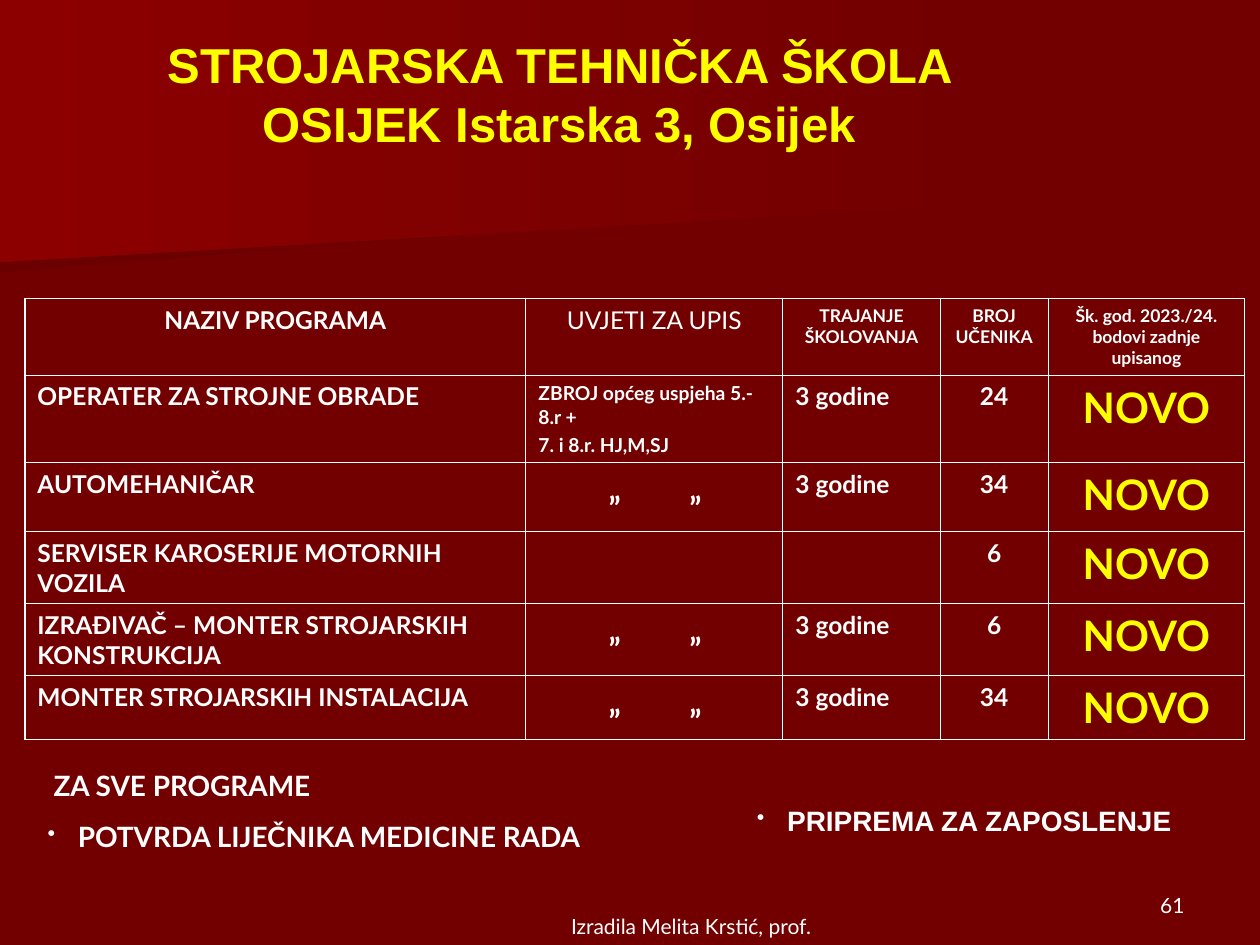
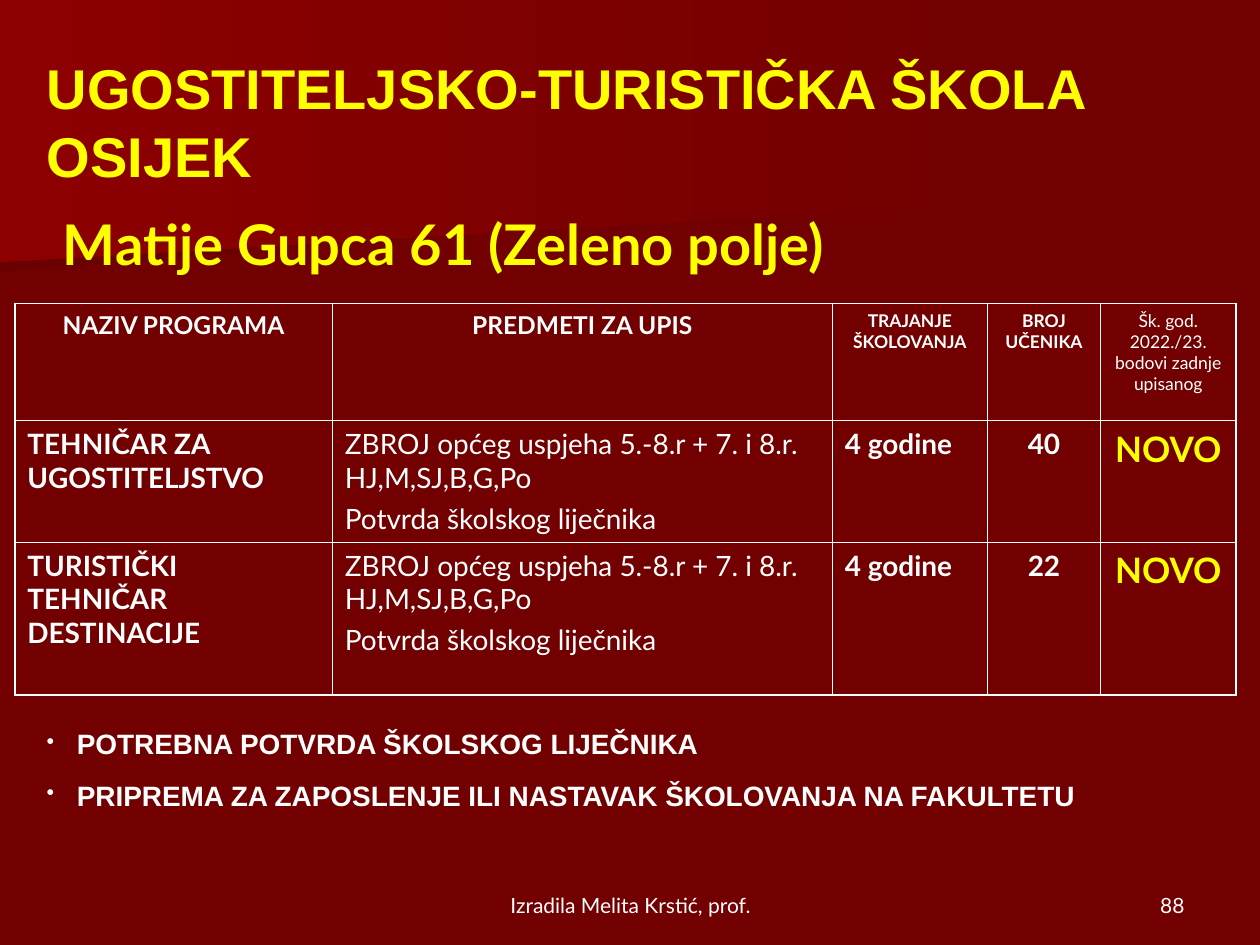
from dataclasses import dataclass
from typing import Optional, Sequence

from lxml import etree
from pptx import Presentation
from pptx import util as u
from pptx.dml.color import RGBColor
from pptx.enum import text as t
from pptx.oxml import ns


@dataclass(frozen=True)
class Theme:
    ground: str = "720000"
    glow: str = "8C0000"
    shade: str = "6B0000"
    white: str = "FFFFFF"
    yellow: str = "FFFF00"
    heading_font: str = "Arial"
    body_font: str = "Lato"
    title: int = 28
    big_title: int = 32
    note: int = 16
    footer: int = 12
    header: int = 14
    small_header: int = 10
    outer_line: float = 1.08
    inner_line: float = 0.45


THEME = Theme()
CENTER, RIGHT = t.PP_ALIGN.CENTER, t.PP_ALIGN.RIGHT
MIDDLE, BOTTOM, TOP = t.MSO_ANCHOR.MIDDLE, t.MSO_ANCHOR.BOTTOM, t.MSO_ANCHOR.TOP


@dataclass(frozen=True)
class Box:
    """Left, top, width and height in centimetres."""
    left: float
    top: float
    width: float
    height: float

    def lengths(self) -> list[u.Length]:
        return [u.Cm(v) for v in (self.left, self.top, self.width, self.height)]


@dataclass(frozen=True)
class Line:
    text: str
    size: float
    bold: bool = True
    color: str = THEME.white
    font: str = THEME.body_font
    align: Optional[t.PP_ALIGN] = None
    before: float = 0
    spacing: Optional[float] = None
    indent: float = 0
    bullet: bool = False
    tabs: tuple[float, ...] = ()


Cell = Sequence[Line]


@dataclass(frozen=True)
class Programmes:
    box: Box
    columns: tuple[float, ...]
    heights: tuple[float, ...]
    rows: Sequence[Sequence[Cell]]
    bottom_line: float


# Text
def write(frame, lines: Sequence[Line]) -> None:
    for i, line in enumerate(lines):
        paragraph = frame.paragraphs[0] if i == 0 else frame.add_paragraph()
        paragraph.text = line.text
        paragraph.alignment = line.align
        if line.spacing:
            paragraph.line_spacing = line.spacing
        if i and line.before:
            paragraph.space_before = u.Pt(line.before)
        props = paragraph._p.get_or_add_pPr()
        if line.indent:
            props.set("marL", str(u.Cm(line.indent)))
            props.set("indent", str(-u.Cm(line.indent) if line.bullet else 0))
        if line.bullet:
            color = etree.SubElement(props, ns.qn("a:buClr"))
            etree.SubElement(color, ns.qn("a:srgbClr"), val=line.color)
            etree.SubElement(props, ns.qn("a:buSzPct"), val="80000")
            etree.SubElement(props, ns.qn("a:buChar"), char="•")
        if line.tabs:
            stops = etree.SubElement(props, ns.qn("a:tabLst"))
            for stop in line.tabs:
                etree.SubElement(stops, ns.qn("a:tab"), pos=str(u.Cm(stop)), algn="l")
        font = paragraph.font
        font.name, font.size, font.bold = line.font, u.Pt(line.size), line.bold
        font.color.rgb = RGBColor.from_string(line.color)


def add_text(slide, box: Box, lines: Sequence[Line], anchor: t.MSO_ANCHOR = TOP) -> None:
    frame = slide.shapes.add_textbox(*box.lengths()).text_frame
    frame.word_wrap = True
    frame.vertical_anchor = anchor
    write(frame, lines)


def title(text: str, size: int, **options) -> Line:
    return Line(text, size, color=THEME.yellow, **{"font": THEME.heading_font, **options})


def bullet(text: str, font: str = THEME.heading_font) -> Line:
    return Line(text, THEME.note, font=font, before=10, indent=0.61, bullet=True)


# Background bands
def add_band(slide, points: Sequence[tuple[float, float]], left_color: str) -> None:
    corners = [(u.Cm(x), u.Cm(y)) for x, y in points]
    builder = slide.shapes.build_freeform(*corners[0])
    builder.add_line_segments(corners[1:], close=True)
    band = builder.convert_to_shape()
    band.shadow.inherit = False
    band.line.fill.background()
    band.fill.gradient()
    band.fill.gradient_angle = 180
    for stop, color, position in zip(band.fill.gradient_stops, (THEME.ground, left_color), (0, 1)):
        stop.color.rgb = RGBColor.from_string(color)
        stop.position = position


def add_base(deck, number: str, footer: Box):
    slide = deck.slides.add_slide(deck.slide_layouts[6])
    ground = slide.background.fill
    ground.solid()
    ground.fore_color.rgb = RGBColor.from_string(THEME.ground)
    add_band(slide, [(19.76, 3.89), (0, 5.49), (0, 2.57), (19.79, 2.57)], THEME.shade)
    add_band(slide, [(20.09, 4.11), (0, 5.28), (0, 0), (20.12, 0)], THEME.glow)
    add_text(slide, Box(18.21, 17.35, 5.92, 1.27),
             [Line(number, THEME.footer, bold=False, align=RIGHT)], BOTTOM)
    add_text(slide, footer,
             [Line("Izradila Melita Krstić, prof.", THEME.footer, bold=False, align=CENTER)], BOTTOM)
    return slide


# Programme table
def cell(*texts: str, size: float = THEME.header, **options) -> Cell:
    return [Line(text, size, before=size / 4, spacing=1.01, **options) for text in texts]


def centered(text: str, size: float = THEME.header, **options) -> Cell:
    return cell(text, size=size, align=CENTER, **options)


def new(size: float) -> Cell:
    return centered("NOVO", size, color=THEME.yellow)


def small_headers(year: str, year_bold: bool) -> list[Cell]:
    size = THEME.small_header
    return [centered("TRAJANJE ŠKOLOVANJA", size), centered("BROJ UČENIKA", size),
            centered(f"Šk. god. {year} bodovi zadnje upisanog", size, bold=year_bold)]


def set_borders(table_cell, widths: dict[str, float]) -> None:
    props = table_cell._tc.get_or_add_tcPr()
    for i, (side, width) in enumerate(widths.items()):
        border = etree.Element(ns.qn(f"a:ln{side}"), w=str(u.Pt(width)))
        fill = etree.SubElement(border, ns.qn("a:solidFill"))
        etree.SubElement(fill, ns.qn("a:srgbClr"), val=THEME.white)
        props.insert(i, border)


def add_programmes(slide, programmes: Programmes) -> None:
    rows, columns = len(programmes.rows), len(programmes.columns)
    table = slide.shapes.add_table(rows, columns, *programmes.box.lengths()).table
    table.first_row = table.horz_banding = False
    for column, width in zip(table.columns, programmes.columns):
        column.width = u.Cm(width)
    for row, height in zip(table.rows, programmes.heights):
        row.height = u.Cm(height)
    outer, inner = THEME.outer_line, THEME.inner_line
    for r, row in enumerate(programmes.rows):
        for c, lines in enumerate(row):
            target = table.cell(r, c)
            target.fill.background()
            set_borders(target, {
                "L": outer if c == 0 else inner,
                "R": outer if c == columns - 1 else inner,
                "T": outer if r == 0 else inner,
                "B": programmes.bottom_line if r == rows - 1 else inner,
            })
            write(target.text_frame, lines)


# Slides
def add_mechanical_school(deck) -> None:
    slide = add_base(deck, "61", Box(9.91, 17.78, 8.05, 1.27))
    add_text(slide, Box(1.37, 0.81, 19.81, 2.16),
             [title("STROJARSKA TEHNIČKA ŠKOLA OSIJEK Istarska 3, Osijek", THEME.title, align=CENTER)],
             MIDDLE)
    ditto = cell("\t„\t„", size=18, tabs=(1.42, 3.05))
    conditions = cell("ZBROJ općeg uspjeha 5.-8.r +", "7. i 8.r. HJ,M,SJ", size=11)
    years = cell("3 godine")
    offers = [
        ("OPERATER ZA STROJNE OBRADE", conditions, years, "24"),
        ("AUTOMEHANIČAR", ditto, years, "34"),
        ("SERVISER KAROSERIJE MOTORNIH VOZILA", [], [], "6"),
        ("IZRAĐIVAČ – MONTER STROJARSKIH KONSTRUKCIJA", ditto, years, "6"),
        ("MONTER STROJARSKIH INSTALACIJA", ditto, years, "34"),
    ]
    header = [centered("NAZIV PROGRAMA"), centered("UVJETI ZA UPIS", bold=False),
              *small_headers("2023./24.", True)]
    add_programmes(slide, Programmes(
        Box(0.5, 6.02, 24.59, 8.69), (10.1, 5.18, 3.17, 2.18, 3.96),
        (1.53, 1.75, 1.4, 1.4, 1.2, 1.2),
        [header] + [[cell(name), terms, length, centered(pupils), new(24)]
                    for name, terms, length, pupils in offers],
        THEME.inner_line))
    add_text(slide, Box(15.01, 16.08, 10.21, 0.97), [bullet("PRIPREMA ZA ZAPOSLENJE")])
    add_text(slide, Box(0.71, 15.37, 13.84, 1.98),
             [Line("ZA SVE PROGRAME", THEME.note, indent=0.12),
              bullet("POTVRDA LIJEČNIKA MEDICINE RADA", THEME.body_font)])


def add_tourism_school(deck) -> None:
    slide = add_base(deck, "88", Box(8.69, 17.35, 8.05, 1.27))
    add_text(slide, Box(0.69, 1.73, 23.8, 3.2),
             [title("UGOSTITELJSKO-TURISTIČKA ŠKOLA OSIJEK", THEME.big_title),
              title("Matije Gupca 61 (Zeleno polje)", THEME.big_title,
                    font=THEME.body_font, before=12, indent=0.33)],
             MIDDLE)
    size = 16
    conditions = cell("ZBROJ općeg uspjeha 5.-8.r + 7. i 8.r. HJ,M,SJ,B,G,Po",
                      "Potvrda školskog liječnika", size=size, bold=False)
    offers = [("TEHNIČAR ZA UGOSTITELJSTVO", "40"), ("TURISTIČKI TEHNIČAR DESTINACIJE", "22")]
    header = [centered("NAZIV PROGRAMA"), centered("PREDMETI ZA UPIS"),
              *small_headers("2022./23.", False)]
    add_programmes(slide, Programmes(
        Box(0.3, 6.12, 24.61, 7.87), (6.4, 10.08, 3.12, 2.29, 2.72), (2.36, 2.42, 3.08),
        [header] + [[cell(name, size=size), conditions, cell("4 godine", size=size),
                     centered(pupils, size), new(20)] for name, pupils in offers],
        THEME.outer_line))
    add_text(slide, Box(0.69, 14.53, 24.21, 1.96),
             [bullet("POTREBNA POTVRDA ŠKOLSKOG LIJEČNIKA"),
              bullet("PRIPREMA ZA ZAPOSLENJE ILI NASTAVAK ŠKOLOVANJA NA FAKULTETU")])


def main() -> None:
    deck = Presentation()
    deck.slide_width, deck.slide_height = u.Cm(25.4), u.Cm(19.05)
    add_mechanical_school(deck)
    add_tourism_school(deck)
    deck.save("out.pptx")


if __name__ == "__main__":
    main()
